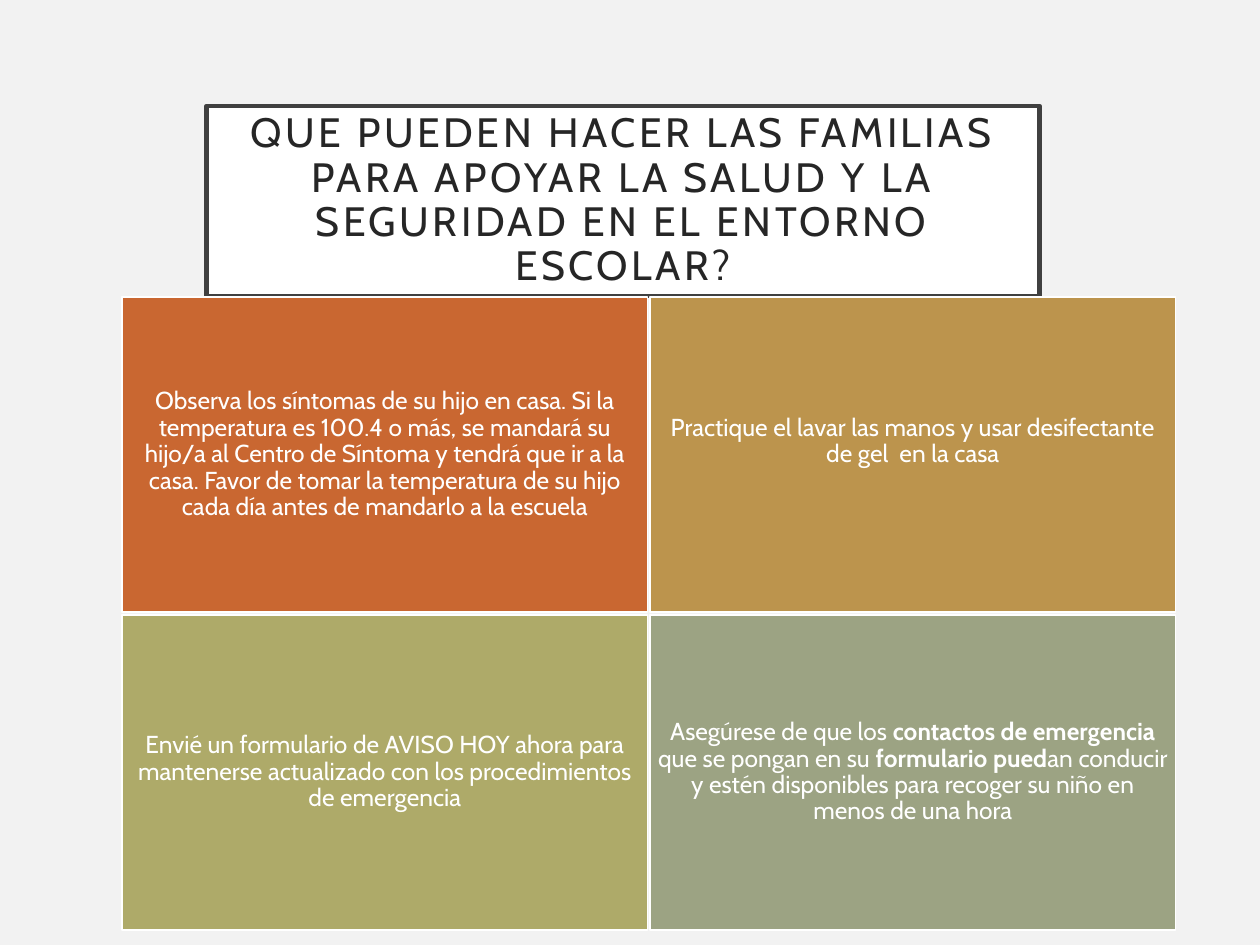
"""Build a slide on how families can support health and safety at school."""
from pptx import Presentation
from pptx.dml.color import RGBColor
from pptx.enum.shapes import MSO_SHAPE
from pptx.enum.text import MSO_ANCHOR, PP_ALIGN
from pptx.util import Inches, Pt

TITLE = ("QUE PUEDEN HACER LAS FAMILIAS PARA APOYAR LA SALUD Y LA "
         "SEGURIDAD EN EL ENTORNO ESCOLAR?")
CARDS = [
    {"fill": "orange", "runs": [
        ("Observa los síntomas de su hijo en casa. Si la temperatura es 100.4 o más, "
         "se mandará su hijo/a al Centro de Síntoma y tendrá que ir a la casa. Favor de "
         "tomar la temperatura de su hijo cada día antes de mandarlo a la escuela", False)]},
    {"fill": "gold", "bottom": 0.27, "runs": [
        ("Practique el lavar las manos y usar desifectante de gel  en la casa", False)]},
    {"fill": "olive", "runs": [
        ("Envié un formulario de AVISO HOY ahora para mantenerse actualizado con los "
         "procedimientos de emergencia", False)]},
    {"fill": "sage", "runs": [
        ("Asegúrese de que los ", False),
        ("contactos de emergencia ", True),
        ("que se pongan en su ", False),
        ("formulario pued", True),
        ("an conducir y estén disponibles para recoger su niño en menos de una hora", False)]},
]
COLORS = {"background": "F2F2F2", "white": "FFFFFF", "border": "404040", "title": "262626",
          "orange": "C96731", "gold": "BC944D", "olive": "AEAA69", "sage": "9CA383"}
FONT = "Cabin"
COLS, LEFT, TOP = 2, 0.97, 2.36
CARD_W, CARD_H, GAP = 4.17, 2.5, 0.02


def rgb(name):
    return RGBColor.from_string(COLORS[name])


def add_box(s, box, fill, line, width, runs, size, color, margins, spacing=0):
    sp = s.shapes.add_shape(MSO_SHAPE.RECTANGLE, *map(Inches, box))
    sp.shadow.inherit = False
    sp.fill.solid()
    sp.fill.fore_color.rgb = rgb(fill)
    sp.line.color.rgb = rgb(line)
    sp.line.width = Pt(width)
    tf = sp.text_frame
    tf.word_wrap = True
    tf.vertical_anchor = MSO_ANCHOR.MIDDLE
    for side, value in margins.items():
        setattr(tf, f"margin_{side}", Inches(value))
    p = tf.paragraphs[0]
    p.alignment = PP_ALIGN.CENTER
    p.line_spacing = 0.9
    for text, bold in runs:
        r = p.add_run()
        r.text = text
        for key, value in {"name": FONT, "size": Pt(size), "bold": bold}.items():
            setattr(r.font, key, value)
        r.font.color.rgb = rgb(color)
        if spacing:
            r._r.get_or_add_rPr().set("spc", str(spacing * 100))


def main():
    prs = Presentation()
    prs.slide_width, prs.slide_height = Inches(10), Inches(7.5)
    s = prs.slides.add_slide(prs.slide_layouts[6])
    s.background.fill.solid()
    s.background.fill.fore_color.rgb = rgb("background")

    add_box(s, (1.64, 0.84, 6.61, 1.51), "white", "border", 2.5, [(TITLE, False)], 23.4,
            "title", {"left": 0.2, "right": 0.2, "top": 0.04, "bottom": 0.04}, spacing=2)
    for i, card in enumerate(CARDS):
        row, col = divmod(i, COLS)
        box = (LEFT + col * (CARD_W + GAP), TOP + row * (CARD_H + GAP), CARD_W, CARD_H)
        margins = {"left": 0.06, "right": 0.06, "top": 0.06,
                   "bottom": card.get("bottom", 0.06)}
        add_box(s, box, card["fill"], "white", 1, card["runs"], 14, "white", margins)
    prs.save("out.pptx")


if __name__ == "__main__":
    main()
